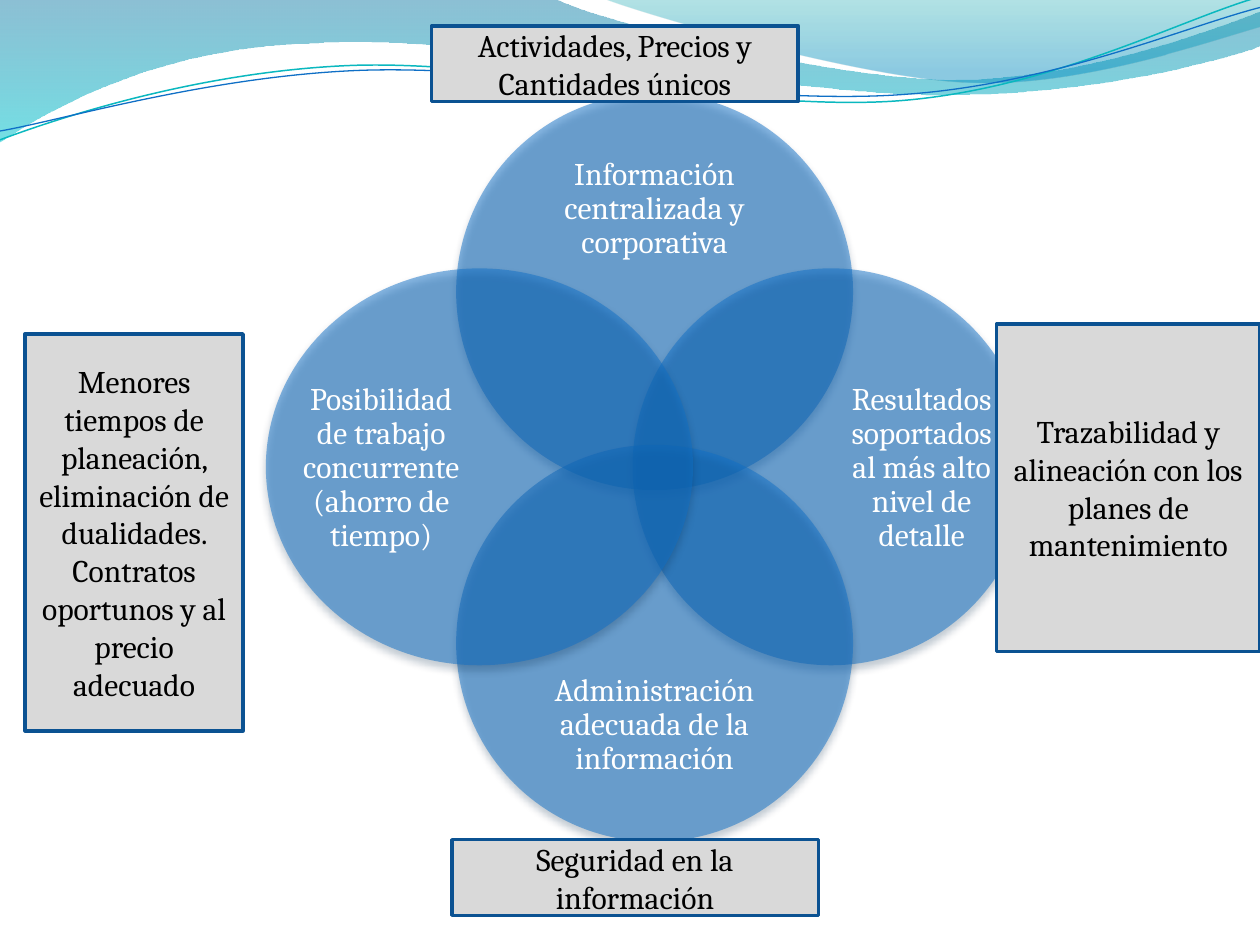
import math

import pptx
import pptx.dml.color
import pptx.enum.shapes
import pptx.enum.text
import pptx.oxml
import pptx.oxml.ns
import pptx.util
from pptx.util import Inches

COLORS = {
    "blue": "0F6FC6", "navy": "0B5292", "shadow": "042747", "gray": "D9D9D9",
    "white": "FFFFFF", "black": "000000", "teal": "0AB8BF",
    "deep_blue": "0074A1", "cyan": "00C6CF", "deep_cyan": "00A1A9", "sky": "008BBF",
}
FONT = "Cambria"
WAVE_TILT = -2.7

WAVES = [
    ((0, 0), [
        [(4.4, -0.01)],
        [(4.76, 0.17), (6.64, 0.63), (7.58, 0.63)],
        [(8.53, 0.63), (9.58, 0.26), (10, 0.09)],
        [(10.01, 0.36)],
        [(9.83, 0.44), (8.7, 0.76), (7.46, 0.75)],
        [(6.22, 0.75), (3.82, 0.28), (2.57, 0.34)],
        [(1.29, 0.36), (0.46, 0.83), (-0.01, 1.13)],
        [(0, 0)],
    ], [("deep_blue", 45, 0), ("cyan", 55, 1)]),
    ((4.79, -0.01), [
        [(5.09, 0.11), (6.82, 0.62), (7.69, 0.65)],
        [(8.56, 0.69), (9.61, 0.32), (10, 0.21)],
        [(10, 0)],
        [(4.79, -0.01)],
    ], [("deep_cyan", 30, 0), ("sky", 45, 0.8)]),
]
WAVE_LINES = [
    ((4.99, 0.58), (0, 1.11), [
        [(0.48, 0.93), (1.58, 0.57), (2.77, 0.52)],
        [(3.95, 0.47), (5.93, 0.89), (7.13, 0.8)],
        [(8.33, 0.71), (9.38, 0.15), (9.98, -0.02)],
    ], "teal", 0.85),
    ((5, 0.59), (0, 1.04), [
        [(0.47, 0.96), (1.64, 0.61), (2.83, 0.56)],
        [(4.03, 0.51), (5.97, 0.84), (7.17, 0.75)],
        [(8.36, 0.67), (9.41, 0.21), (10, 0.06)],
    ], "blue", 0.75),
]
PETALS = [
    ((3.62, 0.74, 3.15, 3.15), (3.98, 1.16, 2.43, 1),
     "Información centralizada y corporativa"),
    ((5.02, 2.13, 3.15, 3.15), (6.71, 2.5, 1.21, 2.43),
     "Resultados soportados al más alto nivel de detalle"),
    ((3.62, 3.53, 3.15, 3.15), (3.98, 5.26, 2.43, 1),
     "Administración adecuada de la información"),
    ((2.11, 2.13, 3.39, 3.15), (2.37, 2.5, 1.31, 2.43),
     "Posibilidad de trabajo concurrente (ahorro de tiempo)"),
]
BENEFITS = [
    ((0.2, 2.65, 1.73, 3.15), False, "Menores tiempos de planeación, eliminación de "
                                     "dualidades. Contratos oportunos y al precio adecuado"),
    ((4.58, -0.95, 0.6, 2.91), True, "Actividades, Precios y Cantidades únicos"),
    ((7.91, 2.57, 2.09, 2.6), False, "Trazabilidad y alineación con los planes de mantenimiento"),
    ((4.74, 5.51, 0.6, 2.91), True, "Seguridad en la información"),
]


def rgb(name):
    """Return the named colour."""
    return pptx.dml.color.RGBColor.from_string(COLORS[name])


def box(bounds):
    """Convert a box in inches to lengths."""
    return [Inches(value) for value in bounds]


def set_opacity(shape, percents):
    """Set the opacity of each colour in the shape's fill, in order."""
    colors = shape._element.spPr.findall(".//" + pptx.oxml.ns.qn("a:srgbClr"))
    for color, percent in zip(colors, percents):
        namespace = pptx.oxml.ns.nsdecls("a")
        color.append(pptx.oxml.parse_xml(f'<a:alpha {namespace} val="{percent * 1000}"/>'))


def add_shadow(shape):
    """Give the shape a soft shadow below it."""
    effects = shape._element.spPr.find(pptx.oxml.ns.qn("a:effectLst"))
    effects.append(pptx.oxml.parse_xml(
        f'<a:outerShdw {pptx.oxml.ns.nsdecls("a")} blurRad="{pptx.util.Pt(4.5)}" '
        f'dist="{pptx.util.Pt(3)}" dir="5400000" rotWithShape="0">'
        f'<a:srgbClr val="{COLORS["shadow"]}"><a:alpha val="48000"/></a:srgbClr>'
        '</a:outerShdw>'))


def turn(point, center, degrees):
    """Turn a point clockwise around a centre."""
    angle = math.radians(degrees)
    x, y = point[0] - center[0], point[1] - center[1]
    return (center[0] + x * math.cos(angle) - y * math.sin(angle),
            center[1] + x * math.sin(angle) + y * math.cos(angle))


def add_outline(shapes, start, segments, close):
    """Add a freeform whose three-point segments are cubic curves."""
    builder = shapes.build_freeform(Inches(start[0]), Inches(start[1]))
    points = [(Inches(x), Inches(y)) for segment in segments for x, y in segment]
    builder.add_line_segments(points, close=close)
    shape = builder.convert_to_shape()
    shape.shadow.inherit = False
    steps = iter(shape._element.spPr.findall(".//" + pptx.oxml.ns.qn("a:lnTo")))
    for segment in segments:
        group = [next(steps) for _ in segment]
        if len(group) == 3:
            curve = pptx.oxml.parse_xml(f'<a:cubicBezTo {pptx.oxml.ns.nsdecls("a")}/>')
            group[0].addprevious(curve)
            for step in group:
                curve.append(step[0])
                step.getparent().remove(step)
    return shape


def add_wave(shapes, start, segments, stops):
    """Add a translucent gradient wave."""
    shape = add_outline(shapes, start, segments, True)
    shape.line.fill.background()
    shape.fill.gradient()
    shape.fill.gradient_angle = 270
    for gradient_stop, (color, _, position) in zip(shape.fill.gradient_stops, stops):
        gradient_stop.color.rgb = rgb(color)
        gradient_stop.position = position
    set_opacity(shape, [opacity for _, opacity, _ in stops])


def add_wave_line(shapes, center, start, segments, color, width):
    """Add a thin curved line, drawn level and then tilted."""
    level = [[turn(point, center, -WAVE_TILT) for point in segment] for segment in segments]
    shape = add_outline(shapes, turn(start, center, -WAVE_TILT), level, False)
    shape.rotation = WAVE_TILT
    shape.fill.background()
    shape.line.color.rgb = rgb(color)
    shape.line.width = pptx.util.Pt(width)


def write_text(shape, text, color):
    """Write centred, wrapped text into the shape."""
    frame = shape.text_frame
    frame.text = text
    frame.word_wrap = True
    frame.vertical_anchor = pptx.enum.text.MSO_ANCHOR.MIDDLE
    paragraph = frame.paragraphs[0]
    paragraph.alignment = pptx.enum.text.PP_ALIGN.CENTER
    font = paragraph.runs[0].font
    font.name = FONT
    font.size = pptx.util.Pt(18)
    font.color.rgb = rgb(color)


def add_filled(shapes, kind, bounds, color):
    """Add a preset shape with a solid fill."""
    shape = shapes.add_shape(kind, *box(bounds))
    shape.shadow.inherit = False
    shape.fill.solid()
    shape.fill.fore_color.rgb = rgb(color)
    return shape


def add_petal(shapes, bounds, label_bounds, text):
    """Add one translucent ellipse of the diagram with its label."""
    ellipse = add_filled(shapes, pptx.enum.shapes.MSO_SHAPE.OVAL, bounds, "blue")
    ellipse.line.fill.background()
    set_opacity(ellipse, [50])
    add_shadow(ellipse)
    label = shapes.add_textbox(*box(label_bounds))
    write_text(label, text, "white")
    frame = label.text_frame
    frame.margin_left = frame.margin_right = frame.margin_top = frame.margin_bottom = 0
    frame.paragraphs[0].line_spacing = 0.9


def add_benefit(shapes, bounds, turned, text):
    """Add a bordered box naming a benefit."""
    shape = add_filled(shapes, pptx.enum.shapes.MSO_SHAPE.RECTANGLE, bounds, "gray")
    shape.line.color.rgb = rgb("navy")
    shape.line.width = pptx.util.Pt(2)
    write_text(shape, text, "black")
    if turned:
        shape.rotation = 90
        shape.text_frame._txBody.bodyPr.set("vert", "vert270")


def main():
    """Build and save the slide."""
    presentation = pptx.Presentation()
    presentation.slide_width, presentation.slide_height = Inches(10), Inches(7.5)
    slide = presentation.slides.add_slide(presentation.slide_layouts[6])
    for add_element, items, grouped in ((add_wave, WAVES, False),
                                        (add_wave_line, WAVE_LINES, True),
                                        (add_petal, PETALS, True),
                                        (add_benefit, BENEFITS, False)):
        shapes = slide.shapes.add_group_shape().shapes if grouped else slide.shapes
        for item in items:
            add_element(shapes, *item)
    presentation.save("out.pptx")


if __name__ == "__main__":
    main()
